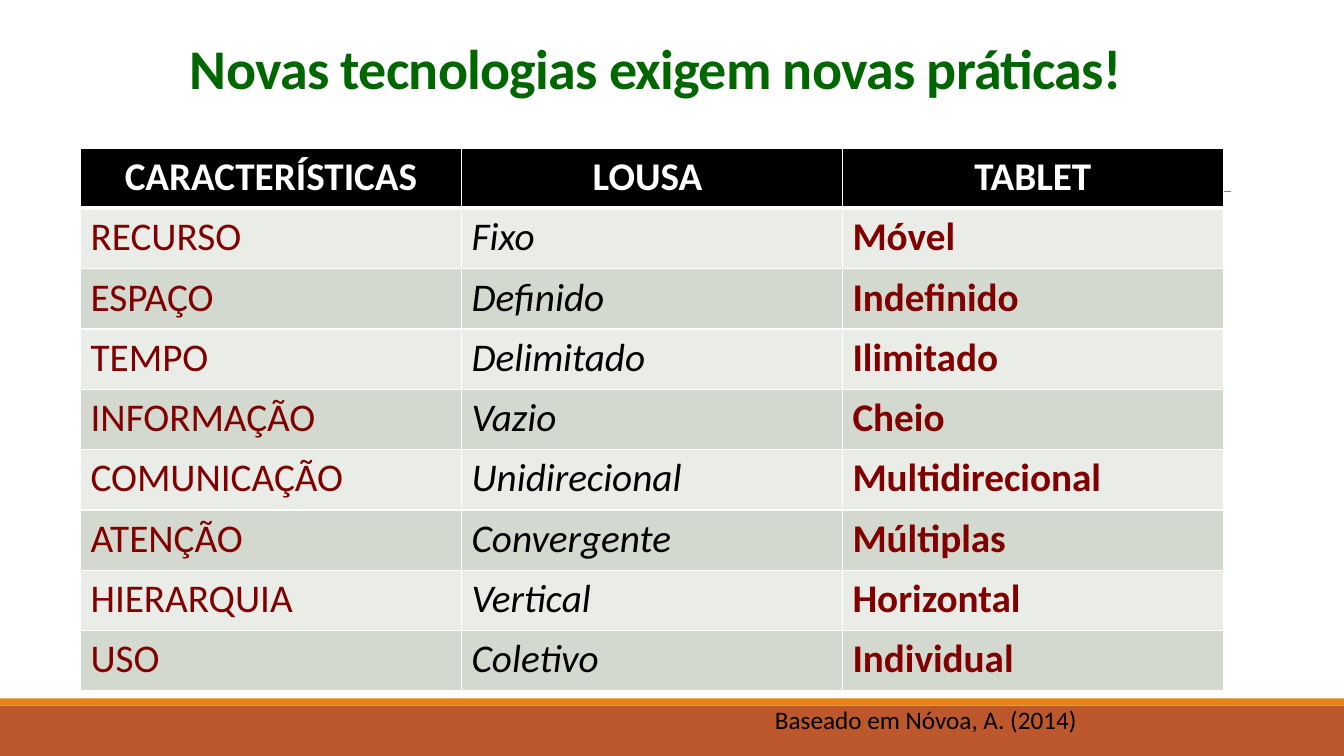
from dataclasses import dataclass

import lxml.etree
import pptx
import pptx.dml.color
import pptx.enum.shapes
import pptx.enum.text
import pptx.oxml.ns
import pptx.util

Cm = pptx.util.Cm
Pt = pptx.util.Pt
qn = pptx.oxml.ns.qn
rgb = pptx.dml.color.RGBColor.from_string
CENTER = pptx.enum.text.PP_ALIGN.CENTER


@dataclass(frozen=True)
class Theme:
    font: str = "Calibri"
    title_size: int = 40
    table_size: int = 28
    credit_size: int = 18
    title: str = "006600"
    black: str = "000000"
    white: str = "FFFFFF"
    maroon: str = "800000"
    light_row: str = "EAECE7"
    dark_row: str = "D4D9CF"
    rule: str = "808080"
    band: str = "BD582C"
    band_edge: str = "E48312"


theme = Theme()


def style_text(paragraph, text, size, color, bold=False, italic=False):
    paragraph.text = text
    font = paragraph.font
    font.name, font.size = theme.font, Pt(size)
    font.bold, font.italic = bold, italic
    font.color.rgb = rgb(color)


def set_borders(cell, bottom_width):
    """Draw 1 pt white edges, with a chosen width in points for the bottom one."""
    properties = cell._tc.get_or_add_tcPr()
    for edge, width in (("lnL", 1), ("lnR", 1), ("lnT", 1), ("lnB", bottom_width)):
        line = lxml.etree.SubElement(properties, qn(f"a:{edge}"), w=str(Pt(width)))
        fill = lxml.etree.SubElement(line, qn("a:solidFill"))
        lxml.etree.SubElement(fill, qn("a:srgbClr"), val=theme.white)


deck = pptx.Presentation()
deck.slide_width, deck.slide_height = Cm(33.87), Cm(19.05)
slide = deck.slides.add_slide(deck.slide_layouts[6])
shapes = slide.shapes

# Footer bands and rule
for top, height, color in ((17.78, 1.27, theme.band), (17.6, 0.18, theme.band_edge)):
    band = shapes.add_shape(pptx.enum.shapes.MSO_SHAPE.RECTANGLE,
                            0, Cm(top), deck.slide_width, Cm(height))
    band.shadow.inherit = False
    band.fill.solid()
    band.fill.fore_color.rgb = rgb(color)
    band.line.fill.background()

rule = shapes.add_connector(pptx.enum.shapes.MSO_CONNECTOR.STRAIGHT,
                            Cm(3.33), Cm(4.83), Cm(31.01), Cm(4.83))
rule.line.color.rgb = rgb(theme.rule)
rule.line.width = Pt(0.5)
lxml.etree.SubElement(rule._element.spPr, qn("a:effectLst"))

# Title
title = shapes.add_textbox(Cm(-0.51), Cm(0.46), Cm(34.37), Cm(2.21)).text_frame
title.word_wrap = True
title.vertical_anchor = pptx.enum.text.MSO_ANCHOR.BOTTOM
heading = title.paragraphs[0]
style_text(heading, "Novas tecnologias exigem novas práticas! ",
           theme.title_size, theme.title, bold=True)
heading.alignment = CENTER
heading.line_spacing = Pt(40)
heading.space_before, heading.space_after = Pt(12), Pt(6)
heading.runs[0]._r.get_or_add_rPr().set("spc", "-50")

# Comparison table
comparison = (
    ("CARACTERÍSTICAS", "LOUSA ", "TABLET"),
    ("RECURSO", "Fixo", "Móvel"),
    ("ESPAÇO", "Definido", "Indefinido"),
    ("TEMPO", "Delimitado", "Ilimitado"),
    ("INFORMAÇÃO", "Vazio", "Cheio"),
    ("COMUNICAÇÃO", "Unidirecional", "Multidirecional"),
    ("ATENÇÃO", "Convergente", "Múltiplas"),
    ("HIERARQUIA", "Vertical", "Horizontal"),
    ("USO", "Coletivo", "Individual"),
)
column_styles = (
    {"color": theme.maroon},
    {"color": theme.black, "italic": True},
    {"color": theme.maroon, "bold": True},
)
header_style = {"color": theme.white, "bold": True}

table = shapes.add_table(len(comparison), len(column_styles), Cm(2.03), Cm(3.73),
                         Cm(28.8), Cm(13.68)).table
for column in table.columns:
    column.width = Cm(9.6)
for row_index, row in enumerate(comparison):
    table.rows[row_index].height = Cm(1.52)
    is_header = row_index == 0
    row_fill = theme.light_row if row_index % 2 else theme.dark_row
    for column_index, text in enumerate(row):
        cell = table.cell(row_index, column_index)
        set_borders(cell, 3 if is_header else 1)
        cell.fill.solid()
        cell.fill.fore_color.rgb = rgb(theme.black if is_header else row_fill)
        entry = cell.text_frame.paragraphs[0]
        style = header_style if is_header else column_styles[column_index]
        style_text(entry, text, theme.table_size, **style)
        if is_header:
            entry.alignment = CENTER

# Source credit
credit = shapes.add_textbox(Cm(19.28), Cm(17.63), Cm(12.93), Cm(1.02)).text_frame
credit.word_wrap = True
credit.auto_size = pptx.enum.text.MSO_AUTO_SIZE.SHAPE_TO_FIT_TEXT
style_text(credit.paragraphs[0], "Baseado em Nóvoa, A. (2014)",
           theme.credit_size, theme.black)

deck.save("out.pptx")
